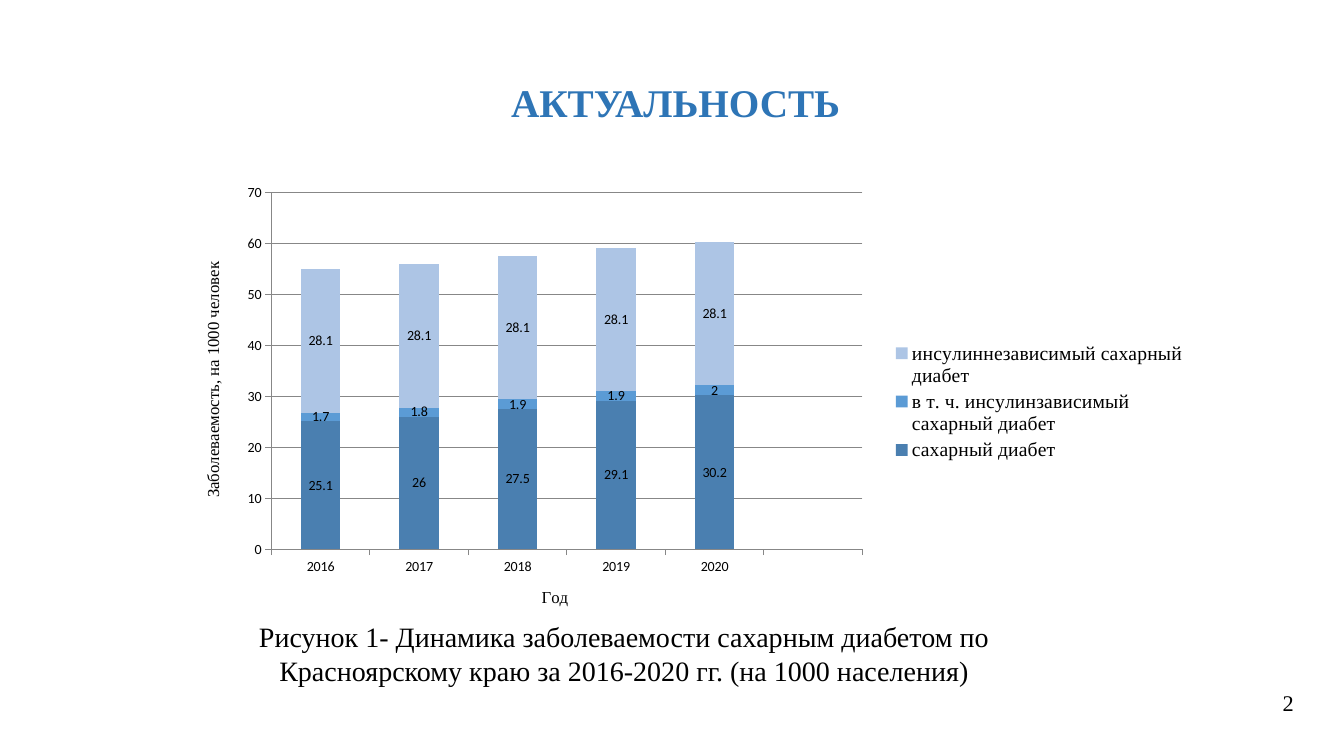
import pptx
import pptx.util
import pptx.chart.data
import pptx.dml.color
import pptx.enum.chart
import pptx.enum.text
import pptx.oxml
import pptx.oxml.ns

Inches, Pt = pptx.util.Inches, pptx.util.Pt
ALIGN = pptx.enum.text.PP_ALIGN
SERIF = "Times New Roman"
COLORS = {
    "title": "2E75B6",
    "text": "000000",
    "axis": "878787",
    "diabetes": "4A7FB0",
    "insulin": "5B9BD5",
    "non_insulin": "ADC5E5",
}


def style_font(font, size, color="text", name=SERIF, bold=False):
    font.name, font.size, font.bold = name, Pt(size), bold
    font.color.rgb = pptx.dml.color.RGBColor.from_string(COLORS[color])


def place_in_chart(parent, index, inner, **fractions):
    """Give a plot area or legend a fixed place, in fractions of the chart."""
    for layout in parent.findall(pptx.oxml.ns.qn("c:layout")):
        parent.remove(layout)
    target = '<c:layoutTarget val="inner"/>' if inner else ""
    modes = '<c:xMode val="edge"/><c:yMode val="edge"/>'
    sizes = "".join(f'<c:{key} val="{value}"/>' for key, value in fractions.items())
    parent.insert(index, pptx.oxml.parse_xml(
        f'<c:layout {pptx.oxml.ns.nsdecls("c")}><c:manualLayout>'
        f"{target}{modes}{sizes}</c:manualLayout></c:layout>"))


deck = pptx.Presentation()
deck.slide_width, deck.slide_height = Inches(13.33), Inches(7.5)
page = deck.slides.add_slide(deck.slide_layouts[5])

# Title
title = page.shapes.title
title.left, title.top = Inches(0.29), Inches(0.66)
title.width, title.height = Inches(12.82), Inches(0.7)
title.text_frame.text = "АКТУАЛЬНОСТЬ"
title.text_frame.vertical_anchor = pptx.enum.text.MSO_ANCHOR.MIDDLE
heading = title.text_frame.paragraphs[0]
heading.alignment = ALIGN.CENTER
style_font(heading.runs[0].font, 28, "title", bold=True)

# Chart data
incidence = pptx.chart.data.CategoryChartData()
incidence.categories = ["2016", "2017", "2018", "2019", "2020", ""]
incidence.add_series("сахарный диабет", [25.1, 26, 27.5, 29.1, 30.2, None])
incidence.add_series("в т. ч. инсулинзависимый сахарный диабет",
                     [1.7, 1.8, 1.9, 1.9, 2, None])
incidence.add_series("инсулиннезависимый сахарный диабет", [28.1] * 5 + [None])

# Stacked columns
chart = page.shapes.add_chart(
    pptx.enum.chart.XL_CHART_TYPE.COLUMN_STACKED,
    Inches(1.79), Inches(1.73), Inches(10.02), Inches(4.51), incidence).chart
chart.has_title = False
style_font(chart.font, 10, name="Calibri")
plot = chart.plots[0]
plot.gap_width, plot.overlap, plot.vary_by_categories = 150, 100, False
for series, color in zip(plot.series, ("diabetes", "insulin", "non_insulin")):
    series.format.fill.solid()
    series.format.fill.fore_color.rgb = pptx.dml.color.RGBColor.from_string(COLORS[color])
    labels = series.data_labels
    labels.show_value = True
    labels.position = pptx.enum.chart.XL_LABEL_POSITION.CENTER
    style_font(labels.font, 10, name="Calibri")

# Axes
years, rate = chart.category_axis, chart.value_axis
rate.minimum_scale, rate.maximum_scale, rate.major_unit = 0, 70, 10
rate.has_major_gridlines = True
for axis, caption in ((years, "Год"), (rate, "Заболеваемость, на 1000 человек")):
    axis.major_tick_mark = pptx.enum.chart.XL_TICK_MARK.OUTSIDE
    axis.axis_title.text_frame.text = caption
    style_font(axis.axis_title.text_frame.paragraphs[0].runs[0].font, 12)
for line in (years.format.line, rate.format.line, rate.major_gridlines.format.line):
    line.width = Pt(0.75)
    line.color.rgb = pptx.dml.color.RGBColor.from_string(COLORS["axis"])

# Legend and plot area
chart.has_legend = True
legend = chart.legend
legend.position = pptx.enum.chart.XL_LEGEND_POSITION.RIGHT
legend.include_in_layout = False
style_font(legend.font, 14)
plot_area = chart._chartSpace.chart.plotArea
place_in_chart(plot_area, 0, True, x=0.09, y=0.04, w=0.585, h=0.785)
place_in_chart(legend._element, 1, False, x=0.7, y=0.36, w=0.3, h=0.28)

# Figure caption and page number
for text, left, top, width, height, size, alignment, anchor in (
    ("Рисунок 1- Динамика заболеваемости сахарным диабетом по "
     "Красноярскому краю за 2016-2020 гг. (на 1000 населения)",
     2.03, 6.1, 8.32, 0.77, 20, ALIGN.CENTER, pptx.enum.text.MSO_ANCHOR.TOP),
    ("2", 9.42, 6.59, 3.51, 0.76, 16, ALIGN.RIGHT, pptx.enum.text.MSO_ANCHOR.MIDDLE),
):
    box = page.shapes.add_textbox(Inches(left), Inches(top), Inches(width), Inches(height))
    box.text_frame.word_wrap = True
    box.text_frame.vertical_anchor = anchor
    box.text_frame.text = text
    para = box.text_frame.paragraphs[0]
    para.alignment = alignment
    style_font(para.runs[0].font, size)

deck.save("out.pptx")
